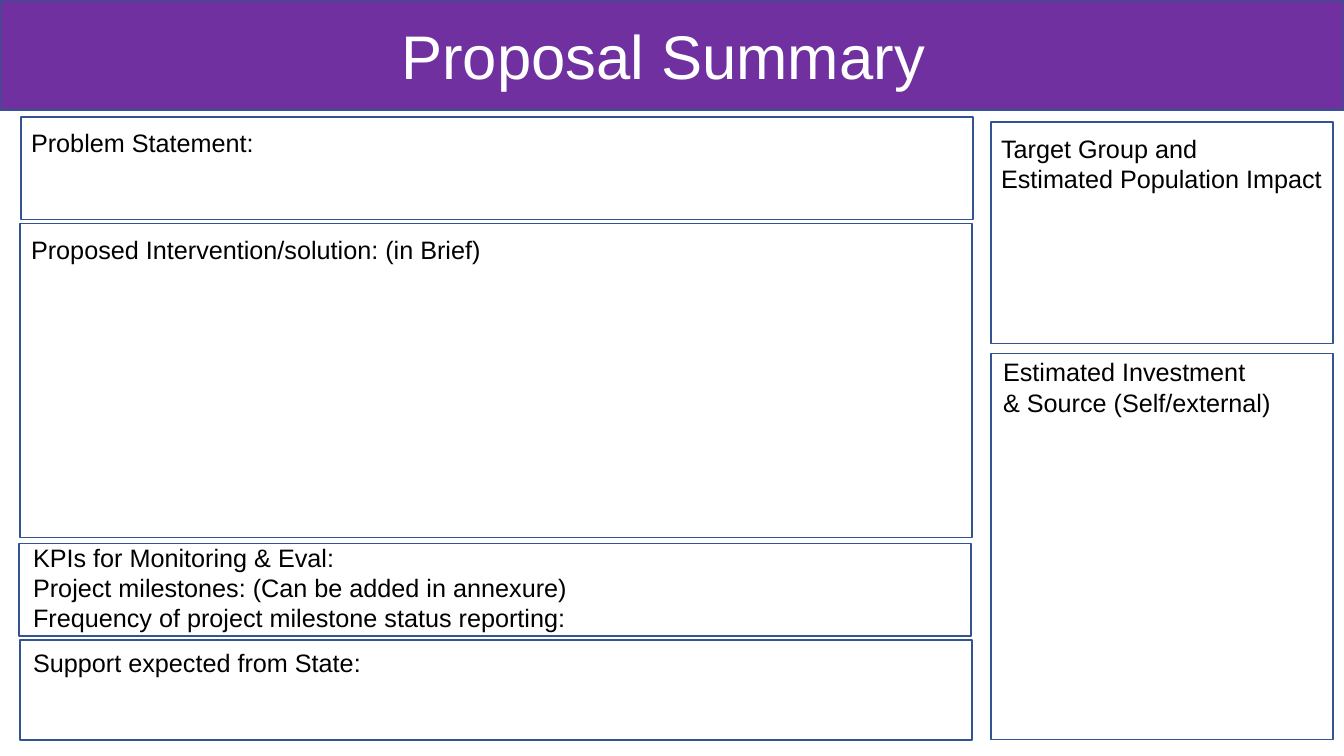
"""Build the proposal summary slide: a title band and six labelled boxes."""
from dataclasses import dataclass

from pptx import Presentation
from pptx.dml.color import RGBColor
from pptx.enum.shapes import MSO_SHAPE
from pptx.enum.text import MSO_ANCHOR, MSO_AUTO_SIZE, PP_ALIGN
from pptx.util import Inches, Pt

RECT = MSO_SHAPE.RECTANGLE
MIDDLE, TOP = MSO_ANCHOR.MIDDLE, MSO_ANCHOR.TOP
LEFT, CENTER = PP_ALIGN.LEFT, PP_ALIGN.CENTER
FIXED, GROW = MSO_AUTO_SIZE.NONE, MSO_AUTO_SIZE.SHAPE_TO_FIT_TEXT


@dataclass(frozen=True)
class Theme:
    font: str = "Arial"
    band: RGBColor = RGBColor(0x70, 0x30, 0xA0)
    edge: RGBColor = RGBColor(0x32, 0x54, 0x91)
    ink: RGBColor = RGBColor(0, 0, 0)
    light: RGBColor = RGBColor(255, 255, 255)
    head: int = 44
    body: int = 18
    rule: int = 1


theme = Theme()


def write(frame, text, size=theme.body, color=theme.ink, align=LEFT,
          anchor=TOP, wrap=False, fit=GROW):
    frame.text = text
    frame.word_wrap = wrap
    frame.auto_size = fit
    frame.vertical_anchor = anchor
    for para in frame.paragraphs:
        para.alignment = align
        for run in para.runs:
            run.font.name = theme.font
            run.font.size = Pt(size)
            run.font.color.rgb = color


def outline(shape):
    shape.line.color.rgb = theme.edge
    shape.line.width = Pt(theme.rule)


deck = Presentation()
deck.slide_width, deck.slide_height = Inches(13.33), Inches(7.5)
slide = deck.slides.add_slide(deck.slide_layouts.get_by_name("Title Only"))

title = slide.shapes.title
title.left, title.top = Inches(0), Inches(0)
title.width, title.height = deck.slide_width, Inches(1.09)
title.fill.solid()
title.fill.fore_color.rgb = theme.band
outline(title)
write(title.text_frame, "Proposal Summary ", size=theme.head,
      color=theme.light, align=CENTER, anchor=MIDDLE, wrap=True, fit=FIXED)

wide, slim = 9.44, 3.39
panels = [
    ((0.21, 1.16, wide, 1.02), (0.21, 1.21, 2.43, 0.4),
     "Problem Statement:"),
    ((0.2, 2.22, wide, 3.11), (0.21, 2.28, 4.7, 0.4),
     "Proposed Intervention/solution: (in Brief)"),
    ((0.19, 5.39, wide, 0.92), (0.23, 5.33, 5.6, 1.01),
     "KPIs for Monitoring & Eval:\n"
     "Project milestones: (Can be added in annexure)\n"
     "Frequency of project milestone status reporting:"),
    ((0.2, 6.35, wide, 0.99), (0.23, 6.37, 3.48, 0.4),
     "Support expected from State:"),
    ((9.83, 1.21, slim, 2.2), (9.83, 1.27, 3.41, 0.71),
     "Target Group and\nEstimated Population Impact"),
    ((9.83, 3.51, slim, 3.83), (9.85, 3.49, 2.88, 0.71),
     "Estimated Investment\n& Source (Self/external)"),
]

for box, spot, text in panels:
    panel = slide.shapes.add_shape(RECT, *map(Inches, box))
    panel.shadow.inherit = False
    panel.fill.background()
    outline(panel)
    label = slide.shapes.add_textbox(*map(Inches, spot))
    write(label.text_frame, text)

deck.save("out.pptx")
